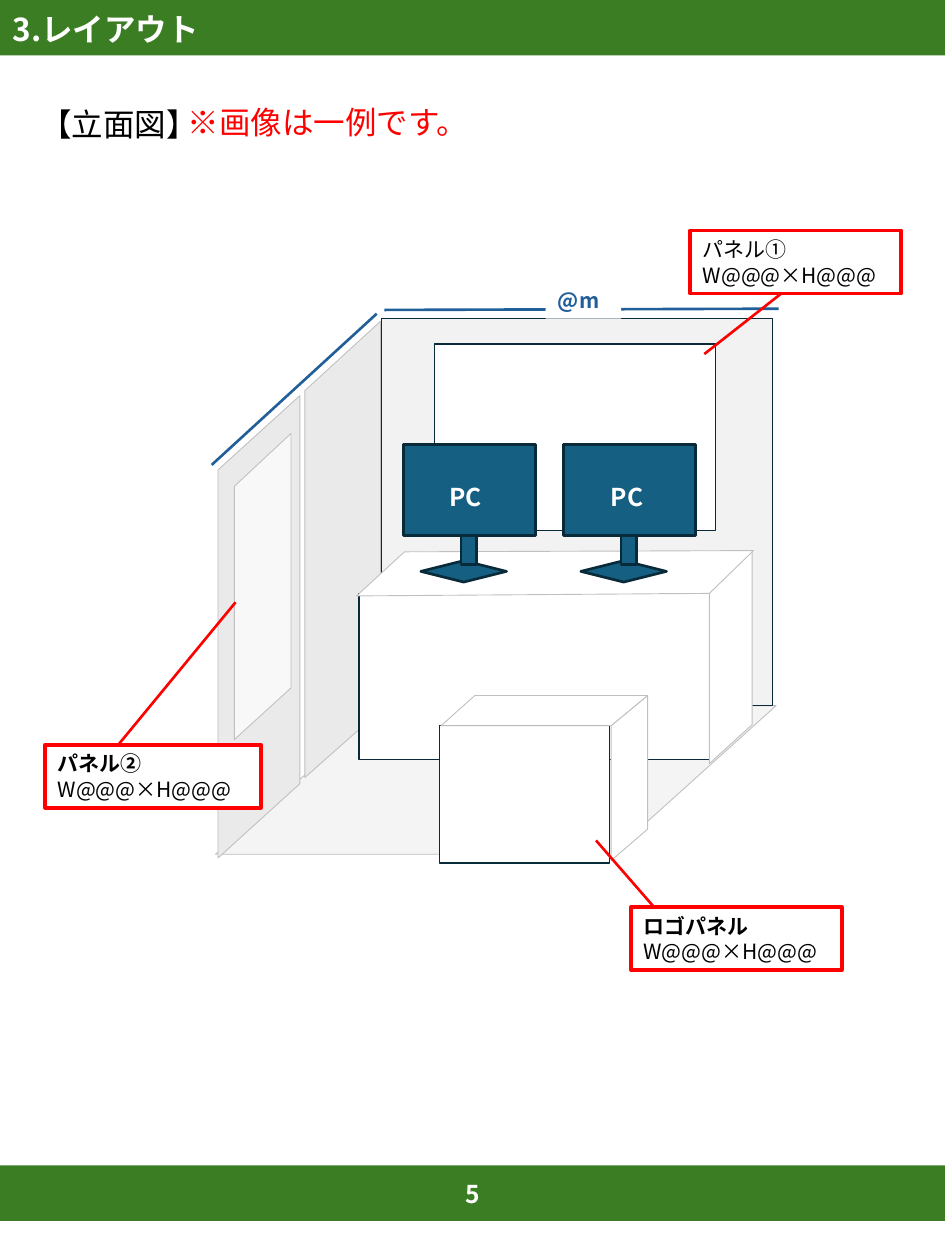
"""Build the booth layout page with its elevation drawing and callouts."""
from lxml import etree
from pptx import Presentation
from pptx.dml.color import RGBColor
from pptx.enum.shapes import MSO_CONNECTOR, MSO_SHAPE
from pptx.enum.text import MSO_ANCHOR, MSO_AUTO_SIZE, PP_ALIGN
from pptx.oxml.ns import qn
from pptx.util import Inches, Pt

RECT, DIAMOND = MSO_SHAPE.RECTANGLE, MSO_SHAPE.FLOWCHART_DECISION
STRAIGHT, LEFT = MSO_CONNECTOR.STRAIGHT, PP_ALIGN.LEFT
FONT = "Noto Sans CJK JP"
GREEN = RGBColor(0x3B, 0x7D, 0x23)
WHITE = RGBColor(0xFF, 0xFF, 0xFF)
BLACK = RGBColor(0, 0, 0)
RED = RGBColor(0xFF, 0, 0)
BLUE = RGBColor(0x21, 0x5F, 0x9A)
TEAL = RGBColor(0x15, 0x60, 0x82)
NAVY = RGBColor(0x09, 0x2A, 0x39)
WALL = RGBColor(0xEA, 0xEA, 0xEA)
BACK_WALL = RGBColor(0xF2, 0xF2, 0xF2)
FLOOR = RGBColor(0xF4, 0xF4, 0xF4)
SIDE_PANEL = RGBColor(0xF8, 0xF8, 0xF8)
EDGE = RGBColor(0xC0, 0xC0, 0xC0)


def paint(shape, fill, line=None, width=0.75):
    shape.shadow.inherit = False
    shape.fill.solid()
    shape.fill.fore_color.rgb = fill
    if line is None:
        shape.line.fill.background()
    else:
        shape.line.color.rgb = line
        shape.line.width = Pt(width)


def write(shape, lines, size, color):
    frame = shape.text_frame
    layout = {"word_wrap": True, "auto_size": MSO_AUTO_SIZE.NONE,
              "vertical_anchor": MSO_ANCHOR.MIDDLE,
              "margin_left": Inches(0.1), "margin_right": 0,
              "margin_top": 0, "margin_bottom": 0}
    for name, value in layout.items():
        setattr(frame, name, value)
    for index, (text, bold) in enumerate(lines):
        para = frame.add_paragraph() if index else frame.paragraphs[0]
        para.alignment = LEFT
        para.line_spacing = Pt(size * 1.2)
        span = para.add_run()
        span.text = text
        for name, value in {"name": FONT, "size": Pt(size), "bold": bold}.items():
            setattr(span.font, name, value)
        span.font.color.rgb = color
        east_asian = etree.SubElement(span.font._element, qn("a:ea"))
        east_asian.set("typeface", FONT)


deck = Presentation()
deck.slide_width, deck.slide_height = Inches(7.5), Inches(10)
page = deck.slides.add_slide(deck.slide_layouts[5])
shapes = page.shapes

for top in (9.25, 0):
    band = shapes.add_shape(RECT, 0, Inches(top), Inches(7.5), Inches(0.44))
    paint(band, GREEN)

title = shapes.title
title.left, title.top, title.width, title.height = map(Inches, (0, 0.03, 2.33, 0.4))
write(title, [("3.レイアウト", True)], 18, WHITE)
title.element.getparent().append(title.element)

surfaces = [
    (FLOOR, [(1.71, 6.78), (3.04, 5.6), (6.16, 5.6), (4.85, 6.78)]),
    (WALL, [(2.42, 3.1), (3.02, 2.55), (3.02, 5.64), (2.42, 6.17)]),
    (WALL, [(1.73, 3.73), (2.38, 3.14), (2.38, 6.22), (1.73, 6.81)]),
    (SIDE_PANEL, [(1.86, 3.86), (2.31, 3.44), (2.31, 5.46), (1.86, 5.87)]),
    (BACK_WALL, (3.03, 2.53, 3.1, 3.07)),
    (WHITE, (3.45, 2.73, 2.23, 1.48)),
    (WHITE, (2.85, 4.71, 2.78, 1.32)),
    (WHITE, [(5.63, 4.71), (5.97, 4.37), (5.97, 5.75), (5.63, 6.06)]),
    (WHITE, [(2.83, 4.73), (3.21, 4.38), (5.98, 4.37), (5.63, 4.71)]),
    (WHITE, (3.49, 5.76, 1.35, 1.09)),
    (WHITE, [(4.85, 5.76), (5.14, 5.52), (5.14, 6.58), (4.85, 6.83)]),
    (WHITE, [(3.5, 5.76), (3.77, 5.52), (5.14, 5.52), (4.85, 5.76)]),
]
for fill, outline in surfaces:
    if isinstance(outline, tuple):
        paint(shapes.add_shape(RECT, *map(Inches, outline)), fill, NAVY)
    else:
        corners = [(Inches(x), Inches(y)) for x, y in outline]
        builder = shapes.build_freeform(*corners[0])
        builder.add_line_segments(corners[1:], close=True)
        paint(builder.convert_to_shape(), fill, EDGE, 0.5)

for left in (3.2, 4.47):
    for preset, x, y, width, height in (
        (DIAMOND, 0.14, 4.45, 0.68, 0.17),
        (RECT, 0.46, 4.25, 0.12, 0.23),
        (RECT, 0, 3.53, 1.05, 0.72),
    ):
        part = shapes.add_shape(preset, *map(Inches, (left + x, y, width, height)))
        paint(part, TEAL, NAVY, 1.5)

for color, start, end in (
    (BLUE, (3.05, 2.46), (6.18, 2.45)),
    (BLUE, (1.68, 3.69), (2.99, 2.49)),
    (RED, (5.59, 2.81), (6.2, 2.33)),
    (RED, (0.94, 5.91), (1.87, 4.78)),
    (RED, (5.2, 7.21), (4.73, 6.67)),
):
    line = shapes.add_connector(STRAIGHT, *map(Inches, start + end))
    line.line.color.rgb = color
    line.line.width = Pt(1.5)
    etree.SubElement(line.element.spPr, qn("a:effectLst"))

width_label = shapes.add_shape(RECT, *map(Inches, (4.33, 2.23, 0.6, 0.3)))
paint(width_label, WHITE)
write(width_label, [("@m", True)], 12, BLUE)

for name, bold, left, top, width in (
    ("パネル①", False, 5.48, 1.83, 1.67),
    ("パネル②", True, 0.36, 5.91, 1.71),
    ("ロゴパネル", True, 5.01, 7.2, 1.67),
):
    callout = shapes.add_shape(RECT, *map(Inches, (left, top, width, 0.5)))
    paint(callout, WHITE, RED, 2.25)
    write(callout, [(name, bold), ("W@@@×H@@@", False)], 12, BLACK)

for text, size, bold, color, place in (
    ("【立面図】", 18, False, BLACK, (0.22, 0.78, 3.53, 0.4)),
    ("※画像は一例です。", 18, False, RED, (1.39, 0.77, 3.78, 0.4)),
    ("PC", 14, True, WHITE, (3.47, 3.77, 0.51, 0.34)),
    ("PC", 14, True, WHITE, (4.75, 3.77, 0.51, 0.34)),
    ("5", 14, True, WHITE, (3.6, 9.3, 0.3, 0.34)),
):
    box = shapes.add_textbox(*map(Inches, place))
    write(box, [(text, bold)], size, color)

deck.save("out.pptx")
